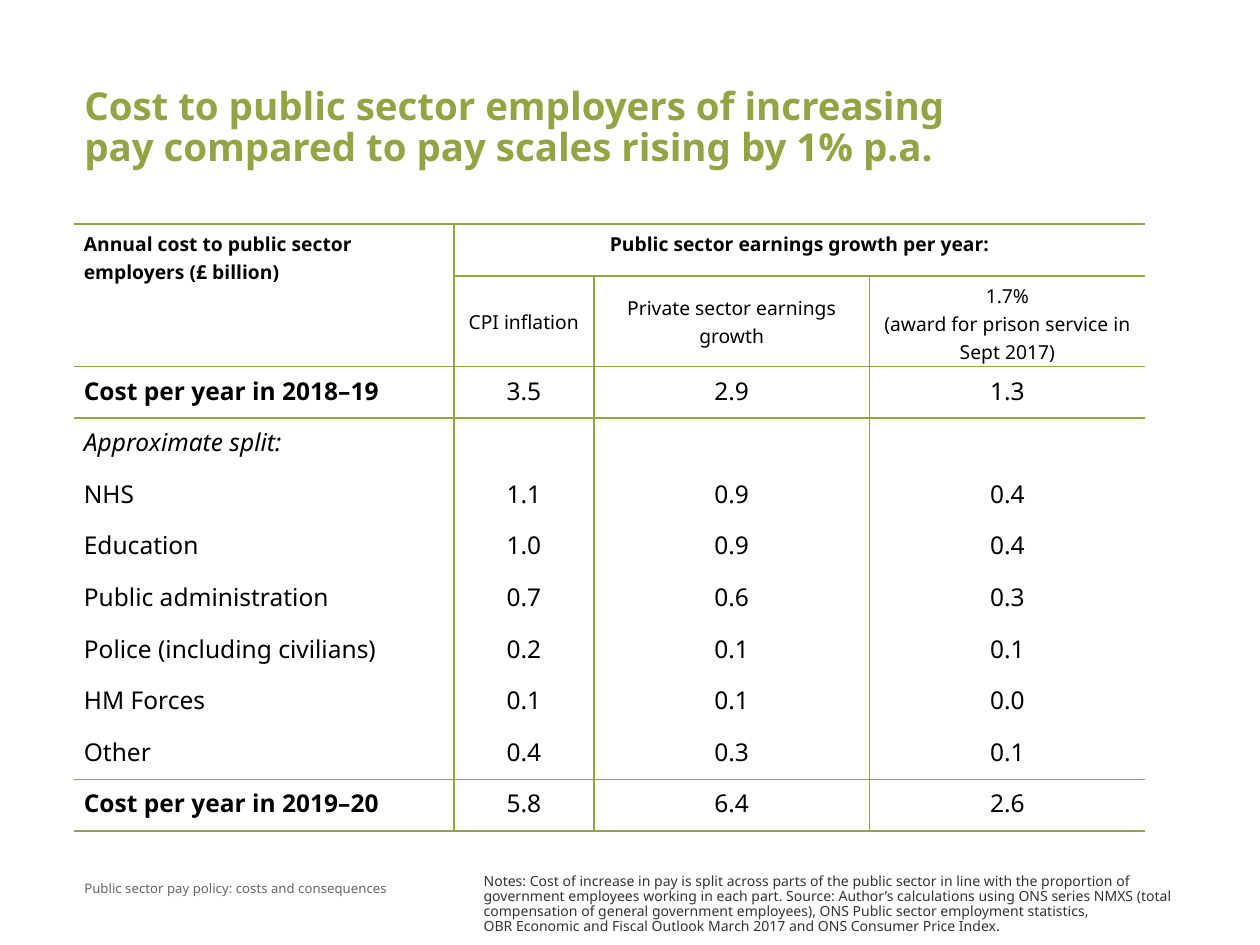
from lxml import etree
from pptx import Presentation
from pptx.dml.color import RGBColor
from pptx.enum.text import MSO_ANCHOR, PP_ALIGN
from pptx.oxml.ns import qn
from pptx.util import Cm, Pt

LEFT, MID = PP_ALIGN.LEFT, PP_ALIGN.CENTER
TOP, CENTRE = MSO_ANCHOR.TOP, MSO_ANCHOR.MIDDLE
GREEN, BLACK = "93A445", "000000"
PLAIN = "{2D5ABB26-0587-4C30-8999-92F81FD0307C}"  # no style, no grid


def write(frame, text, size, hue, bold=False, align=LEFT, space=1.0, anchor=TOP):
    frame.text = text
    frame.word_wrap = True
    frame.vertical_anchor = anchor
    for para in frame.paragraphs:
        para.alignment = align
        para.line_spacing = space
        font = para.font
        font.name, font.size, font.bold = "Noto Sans", Pt(size), bold
        font.color.rgb = RGBColor.from_string(hue)


def rule(cell, sides):
    props = cell._tc.get_or_add_tcPr()
    for spot, side in enumerate(s for s in "LRTB" if s in sides):
        line = etree.Element(qn(f"a:ln{side}"), w=str(Pt(1)))
        fill = etree.SubElement(line, qn("a:solidFill"))
        etree.SubElement(fill, qn("a:srgbClr"), val=GREEN)
        props.insert(spot, line)


deck = Presentation()
deck.slide_width, deck.slide_height = Cm(25.4), Cm(19.05)
slide = deck.slides.add_slide(deck.slide_layouts[5])

# Title
title = slide.shapes.title
title.left, title.top, title.width, title.height = Cm(1.7), Cm(1.75), Cm(17.8), Cm(2.18)
write(title.text_frame, "Cost to public sector employers of increasing pay "
      "compared to pay scales rising by 1% p.a.", 22, GREEN, True, space=0.9)

# Footer
foot = slide.shapes.add_textbox(Cm(1.7), Cm(17.75), Cm(8.05), Cm(1.02))
write(foot.text_frame, "Public sector pay policy: costs and consequences", 7.5, "666666")
for frame in (title.text_frame, foot.text_frame):
    frame.margin_left = frame.margin_right = frame.margin_top = frame.margin_bottom = 0

# Table
rows = [
    ["Annual cost to public sector employers (£ billion)",
     "Public sector earnings growth per year:", "", ""],
    ["", "CPI inflation", "Private sector earnings growth",
     "1.7%\n(award for prison service in Sept 2017)"],
    ["Cost per year in 2018–19", "3.5", "2.9", "1.3"],
    ["Approximate split:", "", "", ""],
    ["NHS", "1.1", "0.9", "0.4"],
    ["Education", "1.0", "0.9", "0.4"],
    ["Public administration", "0.7", "0.6", "0.3"],
    ["Police (including civilians)", "0.2", "0.1", "0.1"],
    ["HM Forces", "0.1", "0.1", "0.0"],
    ["Other", "0.4", "0.3", "0.1"],
    ["Cost per year in 2019–20", "5.8", "6.4", "2.6"],
]
last = len(rows) - 1
widths = [7.65, 2.82, 5.56, 5.56]
heights = [1.04, 1.83] + [1.04] * (last - 1)
table = slide.shapes.add_table(len(rows), len(widths), Cm(1.5), Cm(4.52),
                               Cm(sum(widths)), Cm(sum(heights))).table
table.first_row = table.horz_banding = False
table._tbl.tblPr.find(qn("a:tableStyleId")).text = PLAIN
for col, width in zip(table.columns, widths):
    col.width = Cm(width)
for row, height in zip(table.rows, heights):
    row.height = Cm(height)
table.cell(0, 0).merge(table.cell(1, 0))
table.cell(0, 1).merge(table.cell(0, 3))

for r, row in enumerate(rows):
    for c, text in enumerate(row):
        cell = table.cell(r, c)
        cell.fill.background()
        cell.margin_left = cell.margin_right = Cm(0.19)
        cell.margin_top = cell.margin_bottom = Cm(0.1)
        if text:
            bold = r == 0 or (c == 0 and r in (2, last))
            write(cell.text_frame, text, 11 if r < 2 else 14, BLACK, bold,
                  MID if c else LEFT, 1.07)
            cell.vertical_anchor = CENTRE if r == 1 else TOP

        # Inner column lines, and lines round the heads and the last row
        sides = ""
        if c > 0 and (r > 0 or c == 1):
            sides += "L"
        if c < 3 and (r > 0 or c == 0):
            sides += "R"
        if r in (0, 2, last) or (r == 1 and c > 0):
            sides += "T"
        if r in (1, last - 1, last) or (r == 0 and c > 0):
            sides += "B"
        rule(cell, sides)
table.cell(3, 0).text_frame.paragraphs[0].font.italic = True

# Notes
notes = slide.shapes.add_textbox(Cm(9.5), Cm(17.42), Cm(14.6), Cm(1.63))
write(notes.text_frame,
      "Notes: Cost of increase in pay is split across parts of the public sector in line "
      "with the proportion of government employees working in each part. Source: Author’s "
      "calculations using ONS series NMXS (total compensation of general government "
      "employees), ONS Public sector employment statistics,\n"
      "OBR Economic and Fiscal Outlook March 2017 and ONS Consumer Price Index.",
      8, "333333", space=0.9, anchor=CENTRE)

deck.save("out.pptx")
